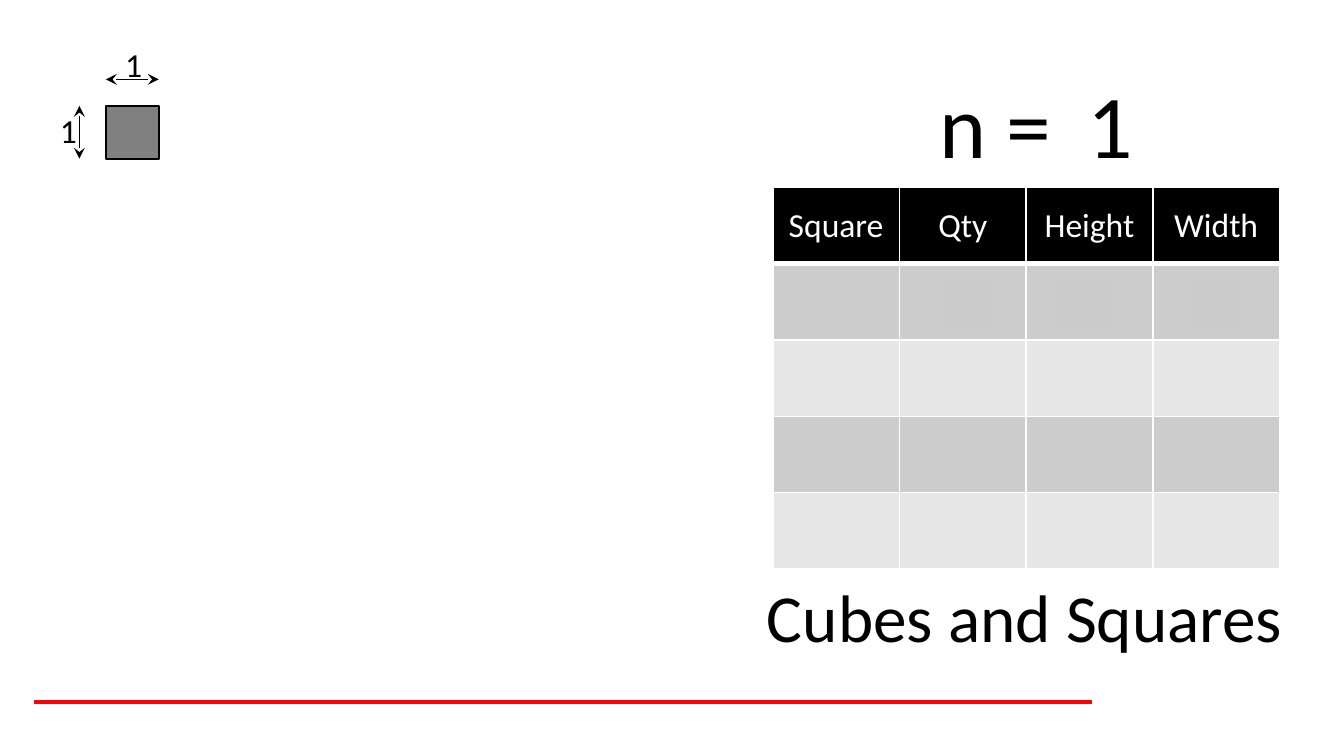
from lxml.etree import SubElement
from pptx import Presentation
from pptx.dml.color import RGBColor
from pptx.enum.shapes import MSO_CONNECTOR as Connector, MSO_SHAPE as Shape
from pptx.enum.text import MSO_ANCHOR as Anchor, PP_ALIGN as Align
from pptx.oxml.ns import qn
from pptx.util import Pt

BLACK, WHITE, RED, GRAY = "000000", "FFFFFF", "FF0000", "808080"
BANDS = ("CCCCCC", "E7E7E7")
FAINT = "CBCBCB"
UNIT = 28.35


def color(hex_text):
    return RGBColor.from_string(hex_text)


class Board:
    """Draws styled elements on one slide, with all lengths in points."""

    def __init__(self, slide, font="Calibri"):
        self.slide = slide
        self.font = font

    def style(self, paragraph, size, ink, align):
        paragraph.alignment = align
        paragraph.font.name = self.font
        paragraph.font.size = Pt(size)
        paragraph.font.color.rgb = color(ink)

    def text(self, words, left, top, width, height, size, align=Align.LEFT):
        box = self.slide.shapes.add_textbox(Pt(left), Pt(top), Pt(width), Pt(height))
        box.text_frame.word_wrap = True
        paragraph = box.text_frame.paragraphs[0]
        paragraph.text = words
        self.style(paragraph, size, BLACK, align)

    def square(self, left, top, fill, outline=None):
        square = self.slide.shapes.add_shape(
            Shape.RECTANGLE, Pt(left), Pt(top), Pt(UNIT), Pt(UNIT))
        square.shadow.inherit = False
        square.fill.solid()
        square.fill.fore_color.rgb = color(fill)
        if outline:
            square.line.color.rgb = color(outline)
            square.line.width = Pt(1)
        else:
            square.line.fill.background()

    def line(self, x1, y1, x2, y2, ink, width, arrows=False):
        line = self.slide.shapes.add_connector(
            Connector.STRAIGHT, Pt(x1), Pt(y1), Pt(x2), Pt(y2))
        line.line.color.rgb = color(ink)
        line.line.width = Pt(width)
        properties = line._element.spPr
        if arrows:
            for end in ("a:headEnd", "a:tailEnd"):
                SubElement(properties.find(qn("a:ln")), qn(end), type="stealth")
        SubElement(properties, qn("a:effectLst"))

    def borders(self, cell, top, bottom):
        properties = cell._tc.get_or_add_tcPr()
        for side, width in (("L", 1), ("R", 1), ("T", top), ("B", bottom)):
            edge = SubElement(properties, qn(f"a:ln{side}"), w=str(Pt(width)))
            fill = SubElement(edge, qn("a:solidFill"))
            SubElement(fill, qn("a:srgbClr"), val=WHITE)

    def table(self, headings, body_rows, left, top, width, height):
        rows = body_rows + 1
        table = self.slide.shapes.add_table(
            rows, len(headings), Pt(left), Pt(top), Pt(width), Pt(height)).table
        for r in range(rows):
            for c, heading in enumerate(headings):
                cell = table.cell(r, c)
                self.borders(cell, 3 if r == 1 else 1, 3 if r == 0 else 1)
                cell.fill.solid()
                cell.fill.fore_color.rgb = color(BANDS[(r - 1) % 2] if r else BLACK)
                if r == 0:
                    cell.text = heading
                    cell.vertical_anchor = Anchor.MIDDLE
                    self.style(cell.text_frame.paragraphs[0], 18, WHITE, Align.CENTER)


def main():
    deck = Presentation()
    deck.slide_width, deck.slide_height = Pt(720), Pt(405)
    board = Board(deck.slides.add_slide(deck.slide_layouts[6]))

    board.line(18, 376, 585, 376, RED, 2)
    board.text("n =", 496, 33.5, 91, 65.5, 48)
    board.text("1", 575.5, 33.5, 91, 65.5, 48)
    board.text("Cubes and Squares", 394, 304.5, 300, 51, 36, Align.RIGHT)

    near, start, end = 1.5 * UNIT, 2 * UNIT, 3 * UNIT
    board.square(start, start, GRAY, BLACK)
    board.line(start, near, end, near, BLACK, 0.5, arrows=True)
    board.line(near, end, near, start, BLACK, 0.5, arrows=True)
    for left, top in ((25, 55.5), (60, 20.2)):
        board.text("1", left, top, 17.5, 29, 18)

    board.table(("Square", "Qty", "Height", "Width"), 4, 414, 100.4, 271.5, 204.5)
    for left in (504, 566.6, 638):
        board.square(left, 147.6, FAINT)

    deck.save("out.pptx")


if __name__ == "__main__":
    main()
